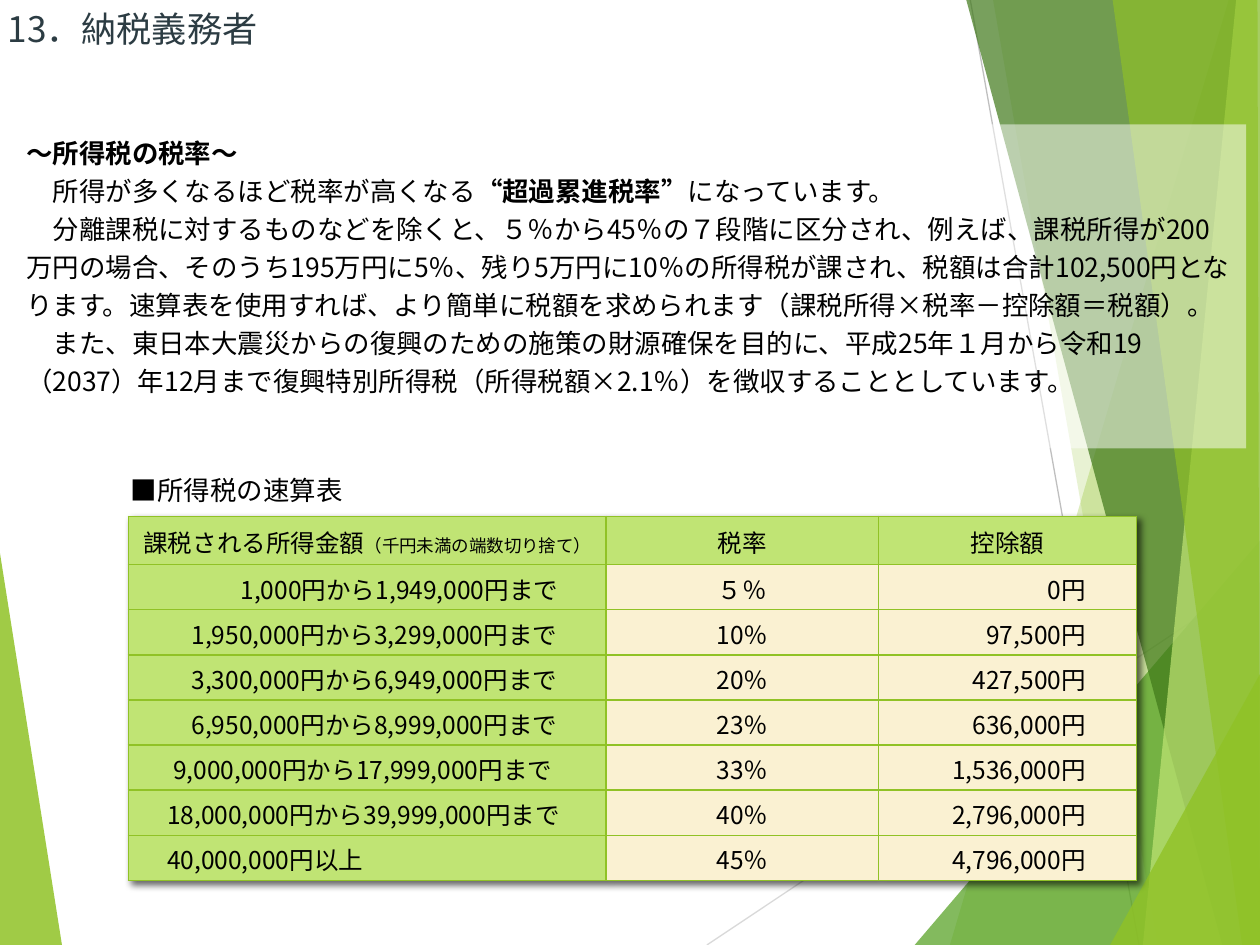
import pptx
import pptx.dml.color
import pptx.enum.shapes
import pptx.enum.text
import pptx.oxml
import pptx.oxml.ns
import pptx.util
from lxml import etree

Cm, Pt = pptx.util.Cm, pptx.util.Pt
qn = pptx.oxml.ns.qn
ALIGN = pptx.enum.text.PP_ALIGN
MIDDLE = pptx.enum.text.MSO_ANCHOR.MIDDLE
FONT = "Noto Sans CJK JP"
WIDE, HIGH = 25.4, 19.05
GREEN, LIME, CREAM = "90C226", "C0E474", "FAF1D2"
SIZE = 15.1

# Points, colour and opacity of each facet, from back to front.
LEAF = ([(0, 11.15), (1.25, HIGH), (0, HIGH)], GREEN, 85)
END, TOP = (WIDE, HIGH), (WIDE, 0)
FACETS = [
    ([(24.77, 0), (19.15, HIGH), END, TOP], GREEN, 30),
    ([(20.02, 0), (23.34, HIGH), END, TOP], GREEN, 20),
    ([(18.44, HIGH), (WIDE, 10.9), END], "54A021", 72),
    ([(19.48, 0), (24.64, HIGH), END, TOP], "3F7819", 70),
    ([(24.92, 0), (23.04, HIGH), END, TOP], LIME, 70),
    ([(22.43, 0), (25.04, HIGH), END, (25.35, 0)], GREEN, 65),
    ([(22.38, HIGH), (WIDE, 13.59), END], GREEN, 80),
]
LINES = [((14.25, HIGH), (WIDE, 11.61), "D9D9D9"),
         ((19.56, 0), (22.96, HIGH), "BFBFBF")]

# First-line indent in full-width characters, then (text, bold, spacing) runs;
# negative spacing tightens the wide quotation marks.
BODY = [
    (0, [("～所得税の税率～", True, 0)]),
    (1, [("所得が多くなるほど税率が高くな", False, 0), ("る", False, -8.5),
         ("“超過累進税率", True, 0), ("”", True, -5),
         ("になっています。", False, 0)]),
    (1, [("分離課税に対するものなどを除くと、５％から45％の７段階に区分され、"
          "例えば、課税所得が200万円の場合、そのうち195万円に5％、残り5万円に10％の"
          "所得税が課され、税額は合計102,500円となります。速算表を使用すれば、"
          "より簡単に税額を求められます（課税所得×税率－控除額＝税額）。", False, 0)]),
    (1, [("また、東日本大震災からの復興のための施策の財源確保を目的に、"
          "平成25年１月から令和19（2037）年12月まで復興特別所得税"
          "（所得税額×2.1％）を徴収することとしています。", False, 0)]),
]

HEAD = [[("課税される所得金額", 14), ("（千円未満の端数切り捨て）", 10)],
        [("税率", 14)], [("控除額", 14)]]
# Indent in full-width characters, income, rate, deduction.
RATES = [
    (4.25, "1,000円から1,949,000円まで", "５％", "0円"),
    (2.25, "1,950,000円から3,299,000円まで", "10％", "97,500円"),
    (2.25, "3,300,000円から6,949,000円まで", "20％", "427,500円"),
    (2.25, "6,950,000円から8,999,000円まで", "23％", "636,000円"),
    (1.5, "9,000,000円から17,999,000円まで", "33％", "1,536,000円"),
    (1.25, "18,000,000円から39,999,000円まで", "40％", "2,796,000円"),
    (1.25, "40,000,000円以上", "45％", "4,796,000円"),
]


def tint(code):
    return pptx.dml.color.RGBColor.from_string(code)


def style(item, **form):
    for key, value in form.items():
        setattr(item, key, value)


def paint(shape, code, alpha):
    """Fill a shape at the given percent of opacity, with no line or shadow."""
    shape.shadow.inherit = False
    shape.line.fill.background()
    shape.fill.solid()
    shape.fill.fore_color.rgb = tint(code)
    mark = shape._element.spPr.find(qn("a:solidFill"))[0]
    etree.SubElement(mark, qn("a:alpha")).set("val", str(alpha * 1000))


def write(para, text, size, code="000000", bold=False, space=0):
    run = para.add_run()
    run.text = text
    style(run.font, name=FONT, size=Pt(size), bold=bold)
    run.font.color.rgb = tint(code)
    east = etree.SubElement(run.font._element, qn("a:ea"))
    east.set("typeface", FONT)
    if space:
        run.font._element.set("spc", str(int(space * 100)))


def indent(para, key, points):
    para._p.get_or_add_pPr().set(key, str(Pt(points)))


def facet(slide, points, code, alpha):
    first, *rest = [(Cm(x), Cm(y)) for x, y in points]
    form = slide.shapes.build_freeform(*first)
    form.add_line_segments(rest, close=True)
    paint(form.convert_to_shape(), code, alpha)


def backdrop(slide):
    facet(slide, *LEAF)
    for start, stop, code in LINES:
        line = slide.shapes.add_connector(
            pptx.enum.shapes.MSO_CONNECTOR.STRAIGHT, *map(Cm, start + stop))
        line.line.width = Pt(0.75)
        line.line.color.rgb = tint(code)
        etree.SubElement(line._element.spPr, qn("a:effectLst"))
    for part in FACETS:
        facet(slide, *part)


def panel(slide, box, paras):
    """Place text on a half-clear white panel."""
    shape = slide.shapes.add_shape(
        pptx.enum.shapes.MSO_SHAPE.RECTANGLE, *map(Cm, box))
    paint(shape, "FFFFFF", 50)
    frame = shape.text_frame
    style(frame, word_wrap=True, vertical_anchor=pptx.enum.text.MSO_ANCHOR.TOP)
    for row, (chars, runs) in enumerate(paras):
        para = frame.add_paragraph() if row else frame.paragraphs[0]
        indent(para, "indent", chars * SIZE)
        style(para, alignment=ALIGN.LEFT, line_spacing=Pt(21.7))
        for text, bold, space in runs:
            write(para, text, SIZE, bold=bold, space=space)


def title(slide, box):
    frame = slide.shapes.add_textbox(*map(Cm, box)).text_frame
    style(frame, word_wrap=True, vertical_anchor=MIDDLE, margin_left=Cm(0.16),
          margin_right=0, margin_top=0, margin_bottom=0)
    write(frame.paragraphs[0], "13．納税義務者", 20.1, "2C3C43")


def border(cell):
    for side in "LRTB":
        cell._tc.get_or_add_tcPr().append(pptx.oxml.parse_xml(
            f'<a:ln{side} {pptx.oxml.ns.nsdecls("a")} w="12700"><a:solidFill>'
            f'<a:srgbClr val="{GREEN}"/></a:solidFill></a:ln{side}>'))


def fill_cell(cell, runs, code, align, right=0.16, chars=0):
    border(cell)
    cell.fill.solid()
    cell.fill.fore_color.rgb = tint(code)
    style(cell, vertical_anchor=MIDDLE, margin_left=Cm(0.16), margin_top=Cm(0.1),
          margin_bottom=Cm(0.05), margin_right=Cm(right))
    para = cell.text_frame.paragraphs[0]
    para.alignment = align
    if chars:
        indent(para, "marL", chars * 14)
    for text, size in runs:
        write(para, text, size)


def shade(table):
    """Give the whole table a soft shadow to the lower right."""
    table._tbl.tblPr.insert(0, pptx.oxml.parse_xml(
        f'<a:effectLst {pptx.oxml.ns.nsdecls("a")}><a:outerShdw blurRad="50800" '
        'dist="38100" dir="2700000" algn="tl" rotWithShape="0"><a:srgbClr '
        'val="000000"><a:alpha val="60000"/></a:srgbClr></a:outerShdw></a:effectLst>'))


def rate_table(slide, box):
    table = slide.shapes.add_table(len(RATES) + 1, 3, *map(Cm, box)).table
    shade(table)
    for col, width in zip(table.columns, (9.63, 5.49, 5.2)):
        col.width = Cm(width)
    for num, row in enumerate(table.rows):
        row.height = Cm(0.91 if num else 0.97)
    for col, runs in enumerate(HEAD):
        fill_cell(table.cell(0, col), runs, LIME, ALIGN.CENTER)
    for num, (chars, income, rate, cut) in enumerate(RATES, 1):
        fill_cell(table.cell(num, 0), [(income, 14)], LIME, ALIGN.LEFT, chars=chars)
        fill_cell(table.cell(num, 1), [(rate, 14)], CREAM, ALIGN.CENTER)
        fill_cell(table.cell(num, 2), [(cut, 14)], CREAM, ALIGN.RIGHT, right=1.02)


def main():
    deck = pptx.Presentation()
    style(deck, slide_width=Cm(WIDE), slide_height=Cm(HIGH))
    slide = deck.slides.add_slide(deck.slide_layouts[6])
    backdrop(slide)
    panel(slide, (2.39, 9.3, 5.77, 1.04), [(0, [("■所得税の速算表", False, 0)])])
    panel(slide, (0.28, 2.51, 24.84, 6.53), BODY)
    rate_table(slide, (2.59, 10.41, 20.32, 7.34))
    title(slide, (0, 0, 10.16, 1.14))
    deck.save("out.pptx")


if __name__ == "__main__":
    main()
